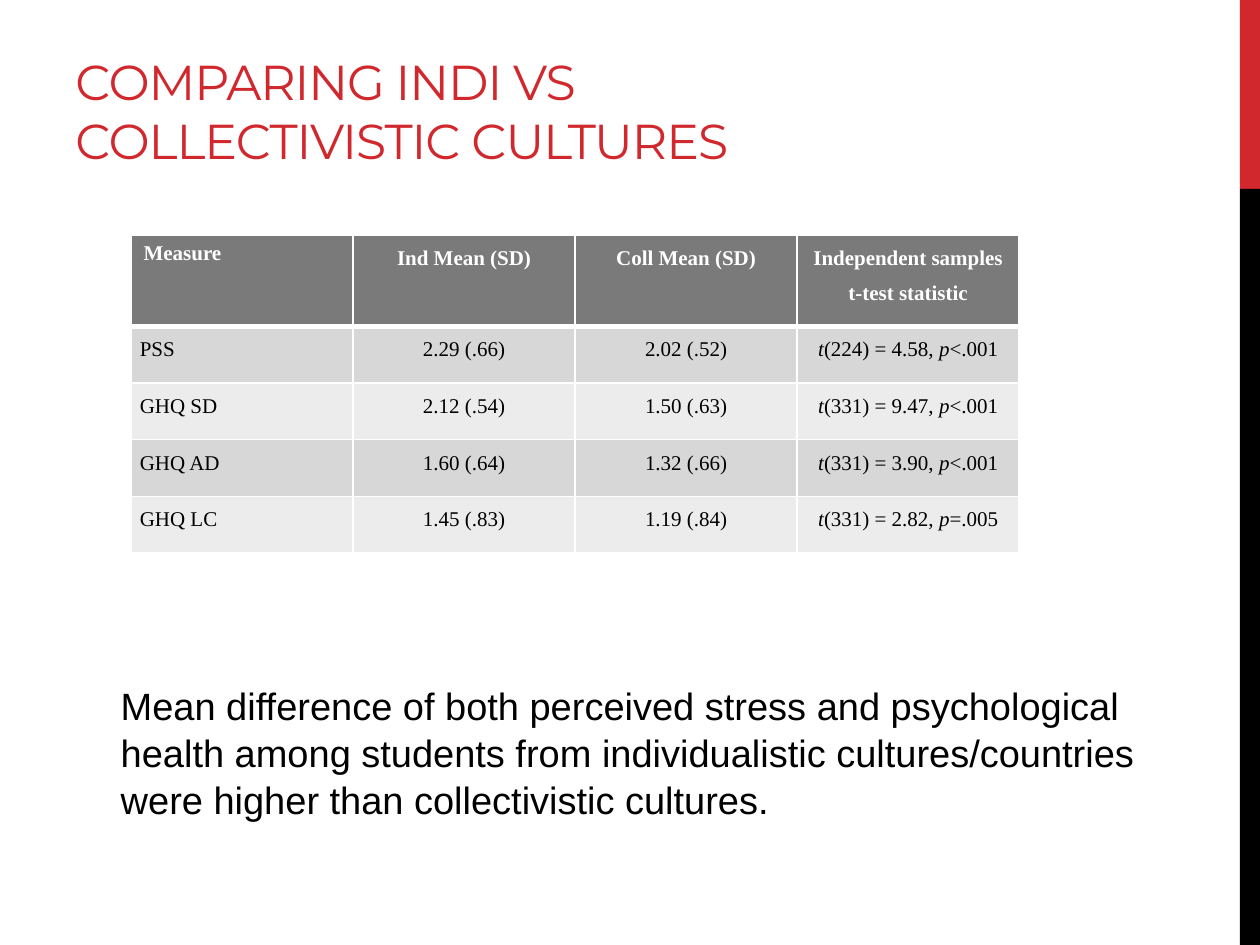
from lxml import etree
from pptx import Presentation, util as u
from pptx.dml import color
from pptx.enum import shapes, text
from pptx.oxml import ns

deck = Presentation()
deck.slide_width, deck.slide_height = u.Inches(10), u.Inches(7.5)
page = deck.slides.add_slide(deck.slide_layouts[6])
column, row = deck.slide_width / 100, deck.slide_height / 75


def paint(target, value):
    if hasattr(target, "solid"):
        target.solid()
        target.fore_color.rgb = color.RGBColor.from_string(value)
    else:
        target.color.rgb = color.RGBColor.from_string(value)


def write(frame, content, font="Times New Roman", size=12, ink="000000", bold=False,
          align=text.PP_ALIGN.LEFT, line=1, before=0, after=0, tracking=None):
    frame.word_wrap = True
    para = frame.paragraphs[0]
    para.alignment, para.line_spacing = align, line
    para.space_before, para.space_after = u.Pt(before), u.Pt(after)
    for number, part in enumerate(content.split("*")):
        if not part:
            continue
        span = para.add_run()
        span.text = part
        span.font.name, span.font.size = font, u.Pt(size)
        span.font.bold, span.font.italic = bold, number % 2 == 1
        paint(span.font, ink)
        if tracking is not None:
            span.font._element.set("spc", str(tracking))


for top, height, fill in [(0, 15, "D1282E"), (15, 60, "000000")]:
    bar = page.shapes.add_shape(
        shapes.MSO_SHAPE.RECTANGLE, int(98.4 * column), int(top * row),
        int(1.6 * column), int(height * row))
    bar.shadow.inherit = False
    paint(bar.fill, fill)
    bar.line.fill.background()

title = page.shapes.add_textbox(
    int(5 * column), int(1.7 * row), int(63.3 * column), int(12.2 * row))
title.text_frame.vertical_anchor = text.MSO_ANCHOR.BOTTOM
write(title.text_frame, "COMPARING INDI VS COLLECTIVISTIC CULTURES",
      font="Montserrat", size=28, ink="D1282E", tracking=-60)

records = [
    ("Measure", "Ind Mean (SD)", "Coll Mean (SD)", "Independent samples t-test statistic"),
    ("PSS", "2.29 (.66)", "2.02 (.52)", "*t*(224) = 4.58, *p*<.001"),
    ("GHQ SD", "2.12 (.54)", "1.50 (.63)", "*t*(331) = 9.47, *p*<.001"),
    ("GHQ AD", "1.60 (.64)", "1.32 (.66)", "*t*(331) = 3.90, *p*<.001"),
    ("GHQ LC", "1.45 (.83)", "1.19 (.84)", "*t*(331) = 2.82, *p*=.005"),
]
table = page.shapes.add_table(
    len(records), 4, int(10.4 * column), int(18.7 * row),
    int(70.5 * column), int(25.2 * row)).table
for r, record in enumerate(records):
    header = r == 0
    table.rows[r].height = int((7.2 if header else 4.5) * row)
    for c, content in enumerate(record):
        cell = table.cell(r, c)
        corner = header and c == 0
        if not corner:
            cell.margin_left = cell.margin_right = int(0.7 * column)
            cell.margin_top = cell.margin_bottom = 0
        write(cell.text_frame, content, bold=header,
              ink="FFFFFF" if header else "000000",
              align=text.PP_ALIGN.CENTER if c else text.PP_ALIGN.LEFT,
              line=1 if corner else 1.5)
        borders = cell._tc.get_or_add_tcPr()
        for side in "LRTB":
            thick = (header and side == "B") or (r == 1 and side == "T")
            edge = etree.SubElement(borders, ns.qn("a:ln" + side), w=str(u.Pt(3 if thick else 1)))
            solid = etree.SubElement(edge, ns.qn("a:solidFill"))
            etree.SubElement(solid, ns.qn("a:srgbClr"), val="FFFFFF")
        paint(cell.fill, "7A7A7A" if header else ("ECECEC", "D7D7D7")[r % 2])

summary = page.shapes.add_textbox(
    int(8.6 * column), int(53.5 * row), int(83 * column), int(13.2 * row))
write(summary.text_frame,
      "Mean difference of both perceived stress and psychological health among students "
      "from individualistic cultures/countries were higher than collectivistic cultures.",
      font="Arial", size=21.7, line=1.04, before=1, after=6)

deck.save("out.pptx")
